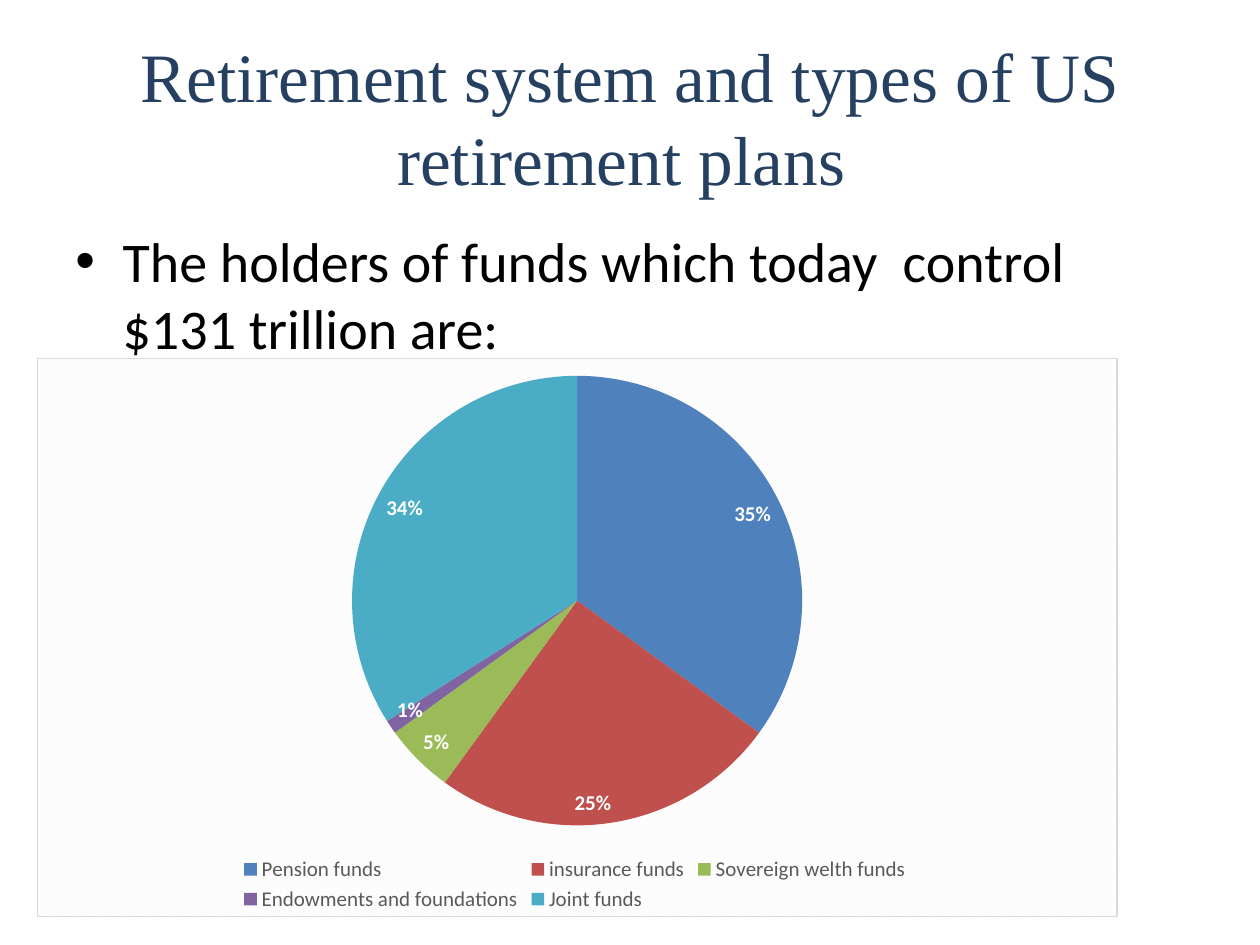
from lxml import etree
from pptx import Presentation
from pptx.chart.data import CategoryChartData
from pptx.dml.color import RGBColor
from pptx.enum.chart import XL_CHART_TYPE, XL_LABEL_POSITION, XL_LEGEND_POSITION
from pptx.enum.text import MSO_ANCHOR, PP_ALIGN
from pptx.oxml import parse_xml
from pptx.util import Pt

PIE = XL_CHART_TYPE.PIE
INSIDE_END = XL_LABEL_POSITION.INSIDE_END
BOTTOM = XL_LEGEND_POSITION.BOTTOM
MIDDLE, TOP = MSO_ANCHOR.MIDDLE, MSO_ANCHOR.TOP
CENTER, LEFT = PP_ALIGN.CENTER, PP_ALIGN.LEFT

COLORS = {
    "title": "254061", "body": "000000", "legend": "595959", "label": "FFFFFF",
    "hatch": "F2F2F2", "background": "FFFFFF", "border": "D9D9D9",
}
FUNDS = [
    ("Pension funds", 35, "4F81BD"),
    ("insurance funds", 25, "C0504D"),
    ("Sovereign welth funds ", 5, "9BBB59"),
    ("Endowments and foundations", 1, "8064A2"),
    ("Joint funds", 34, "4BACC6"),
]
NS_A = "http://schemas.openxmlformats.org/drawingml/2006/main"
NS_C = "http://schemas.openxmlformats.org/drawingml/2006/chart"


def write(shape, text, *, font, size, color, align=LEFT, anchor=TOP):
    frame = shape.text_frame
    frame.word_wrap = True
    frame.vertical_anchor = anchor
    paragraph = frame.paragraphs[0]
    paragraph.alignment = align
    run = paragraph.add_run()
    run.text = text
    run.font.name = font
    run.font.size = Pt(size)
    run.font.color.rgb = RGBColor.from_string(color)
    return paragraph


def style(font, size, color, bold=False):
    font.name = "Calibri"
    font.size = Pt(size)
    font.bold = bold
    font.color.rgb = RGBColor.from_string(color)


deck = Presentation()
deck.slide_width, deck.slide_height = Pt(720), Pt(540)
slide = deck.slides.add_slide(deck.slide_layouts[5])

title = slide.shapes.title
title.left, title.top, title.width, title.height = Pt(36), Pt(21.6), Pt(648), Pt(90)
write(title, "Retirement system and types of US retirement plans ",
      font="Times New Roman", size=39.6, color=COLORS["title"],
      align=CENTER, anchor=MIDDLE)

statement = slide.shapes.add_textbox(Pt(36), Pt(126), Pt(648), Pt(356.4))
bullet_line = write(statement, "The holders of funds which today  control $131 trillion are:",
                    font="Calibri", size=32, color=COLORS["body"])
bullet_line.space_before = Pt(6.4)
bullet_format = bullet_line._p.get_or_add_pPr()
bullet_format.set("marL", str(Pt(27)))
bullet_format.set("indent", str(-Pt(27)))
etree.SubElement(bullet_format, f"{{{NS_A}}}buFont", typeface="Arial")
etree.SubElement(bullet_format, f"{{{NS_A}}}buChar", char="•")

holdings = CategoryChartData(number_format="General")
holdings.categories = [name for name, share, color in FUNDS]
holdings.add_series("Series 1", [share for name, share, color in FUNDS])
chart = slide.shapes.add_chart(PIE, Pt(20.9), Pt(204.5), Pt(617.8), Pt(319.7), holdings).chart
chart.has_title = False
style(chart.font, 10, COLORS["body"])

chart.has_legend = True
chart.legend.position = BOTTOM
chart.legend.include_in_layout = False
style(chart.legend.font, 12, COLORS["legend"])

pie = chart.plots[0]
pie.vary_by_categories = True
for index, (name, share, color) in enumerate(FUNDS):
    fill = pie.series[0].points[index].format.fill
    fill.solid()
    fill.fore_color.rgb = RGBColor.from_string(color)

labels = pie.series[0].data_labels
labels.show_percentage = True
labels.show_value = False
labels.number_format = "0%"
labels.number_format_is_linked = False
labels.position = INSIDE_END
style(labels.font, 12, COLORS["label"], bold=True)

chart_area = parse_xml(
    f'<c:spPr xmlns:c="{NS_C}" xmlns:a="{NS_A}"><a:pattFill prst="dkDnDiag">'
    f'<a:fgClr><a:srgbClr val="{COLORS["hatch"]}"/></a:fgClr>'
    f'<a:bgClr><a:srgbClr val="{COLORS["background"]}"/></a:bgClr></a:pattFill>'
    f'<a:ln w="{Pt(0.75)}"><a:solidFill><a:srgbClr val="{COLORS["border"]}"/>'
    '</a:solidFill></a:ln></c:spPr>'
)
chart._chartSpace.find(f"{{{NS_C}}}chart").addnext(chart_area)

deck.save("out.pptx")
